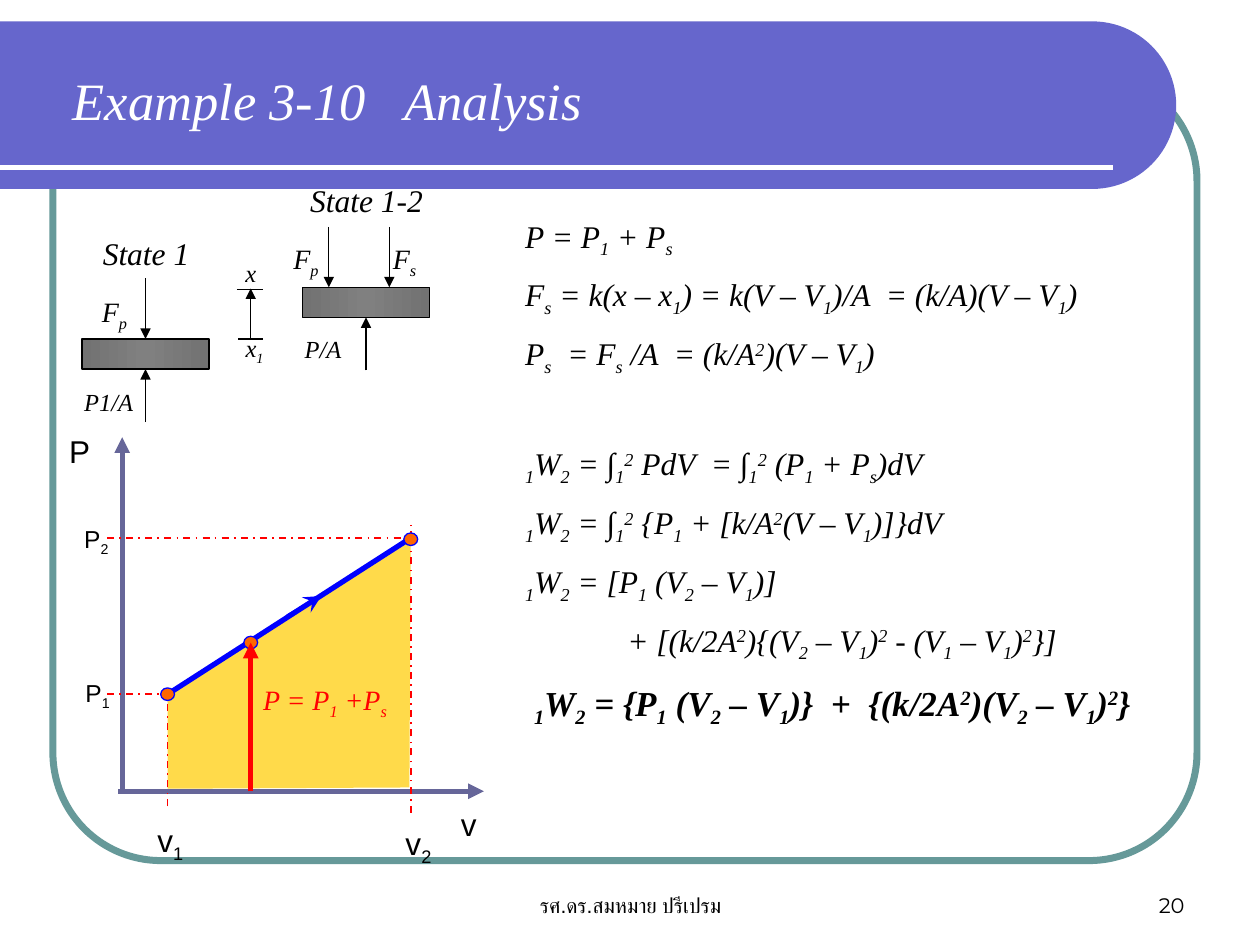
"""Build the Example 3-10 analysis slide with its force diagrams, P-v chart and equations."""
from copy import deepcopy
from math import cos, pi, sin

from lxml import etree
from pptx import Presentation
from pptx.dml.color import RGBColor
from pptx.enum.dml import MSO_LINE
from pptx.enum.shapes import MSO_CONNECTOR, MSO_SHAPE
from pptx.enum.text import MSO_ANCHOR, MSO_AUTO_SIZE, PP_ALIGN
from pptx.oxml.ns import qn
from pptx.util import Inches, Pt

STRAIGHT, DASH_DOT = MSO_CONNECTOR.STRAIGHT, MSO_LINE.DASH_DOT
RECTANGLE, OVAL, ROUNDED = MSO_SHAPE.RECTANGLE, MSO_SHAPE.OVAL, MSO_SHAPE.ROUNDED_RECTANGLE
TOP, MIDDLE, BOTTOM = MSO_ANCHOR.TOP, MSO_ANCHOR.MIDDLE, MSO_ANCHOR.BOTTOM
LEFT, CENTER, RIGHT = PP_ALIGN.LEFT, PP_ALIGN.CENTER, PP_ALIGN.RIGHT
GROW, FIXED = MSO_AUTO_SIZE.SHAPE_TO_FIT_TEXT, MSO_AUTO_SIZE.NONE
TOP_SIDE, BOTTOM_SIDE = 0, 2

SERIF, SANS, NUMERAL = "Times New Roman", "Arial", "Montserrat"
THEME = {
    "black": "000000", "white": "FFFFFF", "band": "6666CC", "frame": "669999",
    "axis": "666699", "process": "0000FF", "guide": "FF0000", "point": "FF6600",
    "work": "FFCC00", "piston edge": "727272", "piston middle": "808080",
    "text": {
        "title": (SERIF, 30, True, "white"),
        "heading": (SERIF, 18, True, "black"),
        "force": (SERIF, 16, True, "black"),
        "small": (SERIF, 14, True, "black"),
        "pressure": (SERIF, 16, True, "guide"),
        "axis": (SANS, 18, False, "black"),
        "tick": (SANS, 14, False, "black"),
        "footer": (SANS, 12, False, "black"),
        "number": (NUMERAL, 12, False, "black"),
    },
}

EQUATIONS = [
    {"text": "P = P_1 + P_s"},
    {"text": "F_s = k(x – x_1) = k(V – V_1)/A  = (k/A)(V – V_1)"},
    {"text": "P_s  = F_s /A  = (k/A^2)(V – V_1)"},
    {"text": "_1W_2 = ∫_1^2 PdV  = ∫_1^2 (P_1 + P_s)dV", "before": 38.5},
    {"text": "_1W_2 = ∫_1^2 {P_1 + [k/A^2(V – V_1)]}dV"},
    {"text": "_1W_2 = [P_1 (V_2 – V_1)]"},
    {"text": "+ [(k/2A^2){(V_2 – V_1)^2 - (V_1 – V_1)^2}]", "indent": 0.81},
    {"text": "_1W_2 = {P_1 (V_2 – V_1)}  +  {(k/2A^2)(V_2 – V_1)^2}",
     "indent": 0.07, "size": 20, "bold": True},
]
LABELS = [
    ("v", "axis", 3.56, 6.34, 0.28), ("P", "axis", 0.45, 3.38, 0.28),
    ("v_1", "axis", 1.15, 6.47, 0.44), ("v_2", "axis", 3.12, 6.49, 0.44),
    ("P_1", "tick", 0.58, 5.33, 0.43), ("P_2", "tick", 0.57, 4.11, 0.43),
    ("P = P_1 +P_s", "pressure", 1.99, 5.37, 1.41),
    ("P1/A", "small", 0.57, 3.02, 0.59), ("P/A", "small", 2.32, 2.6, 0.59),
    ("F_p", "force", 0.71, 2.29, 0.66), ("F_p", "force", 2.23, 1.87, 0.66),
    ("F_s", "force", 3.02, 1.87, 0.66),
    ("x_1", "small", 1.85, 2.59, 0.42), ("x", "small", 1.85, 2, 0.26),
]
HEADINGS = [("State 1", 0.48, 1.81), ("State 1-2", 2.23, 1.39)]
AXES = [(0.94, 6.28, 3.84, 6.28), (0.97, 6.3, 0.97, 3.47)]
GUIDES = [
    (1.33, 6.4, 1.33, 5.5), (0.85, 5.51, 1.35, 5.51),
    (3.26, 6.45, 3.26, 4.17), (0.85, 4.27, 3.24, 4.27),
]
POINTS = [(1.33, 5.51), (3.26, 4.28), (1.99, 5.1)]
WORK_AREA = [(1.33, 6.26), (1.33, 5.51), (3.26, 4.28), (3.25, 6.25)]
PISTONS = [(0.65, 2.69), (2.4, 2.28)]
LIFT_MARKS = [(1.89, 2.69, 2.09, 2.69), (1.88, 2.3, 2.09, 2.3)]


def color(name):
    return RGBColor.from_string(THEME[name])


def set_all(target, values):
    for name, value in values.items():
        setattr(target, name, value)


def add_line(slide, ends, line_color, width, arrow=None, dash=None, arrow_size="med"):
    connector = slide.shapes.add_connector(STRAIGHT, *map(Inches, ends))
    connector.line.color.rgb = color(line_color)
    set_all(connector.line, {"width": Pt(width), "dash_style": dash})
    if arrow:
        etree.SubElement(connector.line._get_or_add_ln(), qn("a:tailEnd"),
                         type=arrow, w=arrow_size, len=arrow_size)
    etree.SubElement(connector._element.spPr, qn("a:effectLst"))
    return connector


def finish(shape, fill=None, line=None, width=0.75):
    shape.shadow.inherit = False
    if fill:
        shape.fill.solid()
        shape.fill.fore_color.rgb = color(fill)
    else:
        shape.fill.background()
    if line:
        shape.line.color.rgb = color(line)
        shape.line.width = Pt(width)
    else:
        shape.line.fill.background()
    return shape


def add_shape(slide, kind, box, **look):
    return finish(slide.shapes.add_shape(kind, *map(Inches, box)), **look)


def add_outline(slide, points, fill):
    corners = [(Inches(x), Inches(y)) for x, y in points]
    builder = slide.shapes.build_freeform(*corners[0])
    builder.add_line_segments(corners[1:], close=True)
    return finish(builder.convert_to_shape(), fill=fill)


def write(paragraph, markup, style, size=None, bold=False):
    name, default_size, italic, font_color = THEME["text"][style]
    pieces, baseline = [["", 0]], 0
    for character in markup:
        if character in "_^":
            baseline = -25000 if character == "_" else 30000
            continue
        if baseline != pieces[-1][1]:
            pieces.append(["", baseline])
        pieces[-1][0] += character
        baseline = 0
    for text, baseline in filter(lambda piece: piece[0], pieces):
        run = paragraph.add_run()
        run.text = text
        set_all(run.font, {"name": name, "size": Pt(size or default_size),
                           "italic": italic, "bold": bold})
        run.font.color.rgb = color(font_color)
        if baseline:
            run._r.get_or_add_rPr().set("baseline", str(baseline))


def add_text(slide, box, markup, style, align=LEFT, **frame_format):
    frame = slide.shapes.add_textbox(*map(Inches, box)).text_frame
    set_all(frame, {"word_wrap": True, "auto_size": FIXED, "vertical_anchor": TOP, **frame_format})
    frame.paragraphs[0].alignment = align
    write(frame.paragraphs[0], markup, style)
    return frame


def add_equations(slide):
    frame = add_text(slide, (4.07, 1.67, 5.25, 4.56), "", "heading", auto_size=GROW)
    for index, equation in enumerate(EQUATIONS):
        paragraph = frame.add_paragraph() if index else frame.paragraphs[0]
        size = equation.get("size", 18)
        if index:
            paragraph.space_before = Pt(equation.get("before", size * 0.5))
        paragraph._p.get_or_add_pPr().set("marL", str(Inches(equation.get("indent", 0))))
        write(paragraph, equation["text"], "heading", size, equation.get("bold", False))


def add_piston(slide, left, top):
    piston = add_shape(slide, RECTANGLE, (left, top, 1.01, 0.24), line="black")
    piston.fill.gradient()
    piston.fill.gradient_angle = 0
    for stop, name, position in zip(piston.fill.gradient_stops, ("piston edge", "piston middle"), (0, 0.5)):
        stop.color.rgb = color(name)
        stop.position = position
    stops = next(piston._element.iter(qn("a:gsLst")))
    last_stop = deepcopy(stops[0])
    last_stop.set("pos", "100000")
    stops.append(last_stop)
    return piston


def add_forces(slide):
    pistons = [add_piston(slide, left, top) for left, top in PISTONS]
    for piston, (left, top) in zip(pistons, PISTONS):
        middle = left + 0.505
        upward = add_line(slide, (middle, top + 0.66, middle, top + 0.24), "black", 0.75, "triangle")
        upward.end_connect(piston, BOTTOM_SIDE)
    middle = PISTONS[0][0] + 0.505
    downward = add_line(slide, (middle, 2.21, middle, 2.69), "black", 0.75, "triangle")
    downward.end_connect(pistons[0], TOP_SIDE)
    for x in (2.61, 3.09):
        add_line(slide, (x, 1.8, x, 2.28), "black", 0.75, "triangle")
    for mark in LIFT_MARKS:
        add_line(slide, mark, "black", 0.75)
    add_line(slide, (1.99, 2.69, 1.99, 2.29), "black", 0.75, "triangle")


def add_chart_area(slide):
    area = add_outline(slide, WORK_AREA, "work")
    fill = next(area._element.spPr.iter(qn("a:srgbClr")))
    etree.SubElement(fill, qn("a:alpha"), val="71000")
    for axis in AXES:
        add_line(slide, axis, "axis", 3, "triangle")
    add_line(slide, (1.33, 5.51, 3.26, 4.27), "process", 3)
    add_line(slide, (2.28, 4.89, 2.55, 4.73), "process", 2, "stealth", arrow_size="lg")
    for guide in GUIDES:
        add_line(slide, guide, "guide", 1, dash=DASH_DOT)
    for x, y in POINTS:
        add_shape(slide, OVAL, (x - 0.055, y - 0.05, 0.11, 0.1), fill="point", line="process")
    add_line(slide, (1.99, 6.28, 1.99, 5.1), "guide", 3, "triangle")


def add_frame(slide):
    border = add_shape(slide, ROUNDED, (0.42, 0.58, 9.08, 6.25), line="frame", width=4)
    border.adjustments[0] = 0.137
    radius, steps = 0.665, 48
    angles = [pi * step / steps - pi / 2 for step in range(steps + 1)]
    arc = [(8.67 + radius * cos(angle), 0.835 + radius * sin(angle)) for angle in angles]
    add_outline(slide, [(0, 0.17), *arc, (0, 1.5)], "band")
    add_line(slide, (0, 1.33, 8.83, 1.33), "white", 3)
    add_text(slide, (3.42, 6.83, 3.17, 0.5), "รศ.ดร.สมหมาย ปรีเปรม", "footer", CENTER, vertical_anchor=BOTTOM)
    add_text(slide, (7.17, 6.83, 2.33, 0.5), "20", "number", RIGHT, vertical_anchor=BOTTOM)
    title = add_text(slide, (0.48, 0.29, 7.6, 1), "Example 3-10\tAnalysis", "title", vertical_anchor=MIDDLE)
    tabs = etree.SubElement(title.paragraphs[0]._p.get_or_add_pPr(), qn("a:tabLst"))
    etree.SubElement(tabs, qn("a:tab"), pos=str(Inches(2.63)), algn="l")


def main():
    presentation = Presentation()
    set_all(presentation, {"slide_width": Inches(10), "slide_height": Inches(7.5)})
    slide = presentation.slides.add_slide(presentation.slide_layouts[6])
    add_frame(slide)
    add_chart_area(slide)
    add_equations(slide)
    add_forces(slide)
    heights = {18: 0.4, 16: 0.37, 14: 0.33}
    for markup, style, left, top, width in LABELS:
        height = heights[THEME["text"][style][1]]
        add_text(slide, (left, top, width, height), markup, style, auto_size=GROW, margin_right=0)
    for text, left, top in HEADINGS:
        add_text(slide, (left, top, 1.36, 0.4), text, "heading", CENTER, auto_size=GROW)
    presentation.save("out.pptx")


if __name__ == "__main__":
    main()
